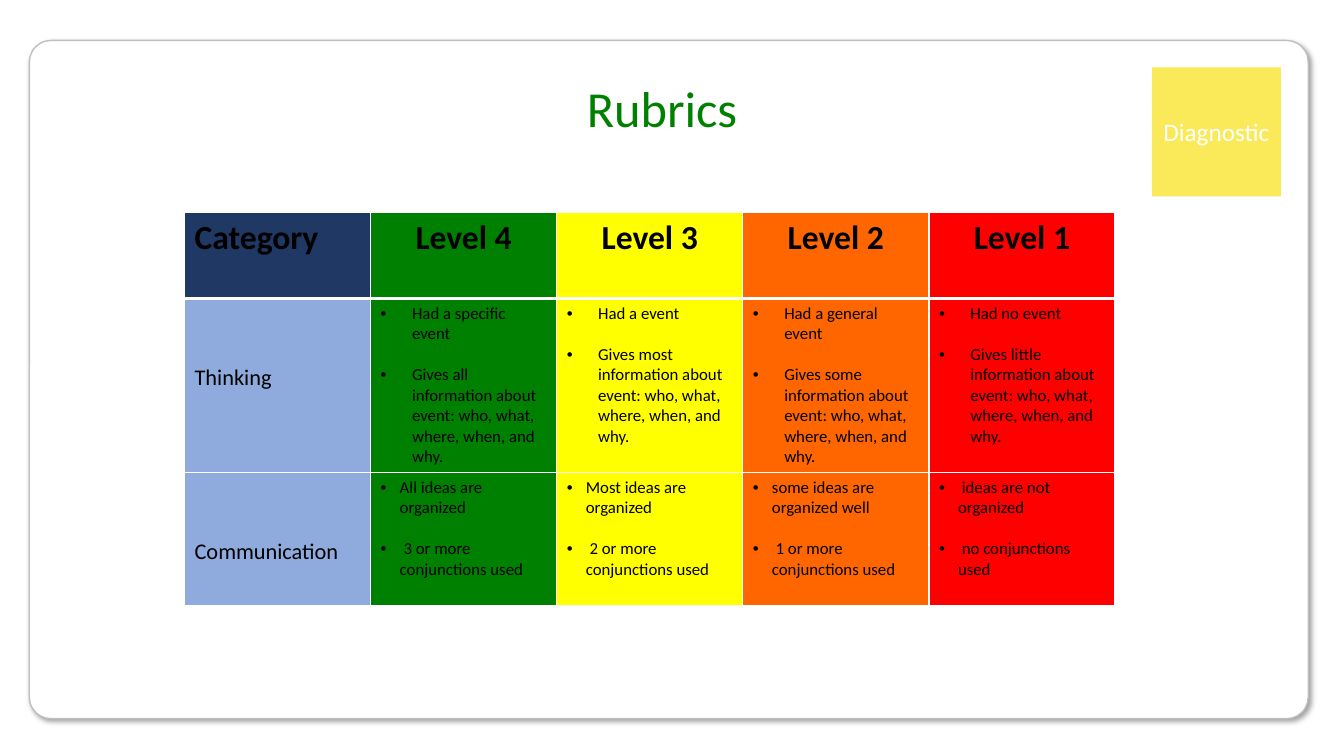
"""Build the writing rubric slide."""
from lxml.etree import SubElement
from pptx import Presentation
from pptx.dml.color import RGBColor
from pptx.enum.shapes import MSO_SHAPE as SHAPE
from pptx.enum.text import MSO_ANCHOR as ANCHOR, PP_ALIGN as ALIGN
from pptx.oxml import parse_xml
from pptx.oxml.ns import nsdecls, qn
from pptx.util import Cm, Pt

WHITE = RGBColor(0xFF, 0xFF, 0xFF)
BLACK = RGBColor(0, 0, 0)
GREY = RGBColor(0xBF, 0xBF, 0xBF)
PALE_YELLOW = RGBColor(0xFA, 0xE9, 0x59)
NAVY = RGBColor(0x20, 0x38, 0x64)
LIGHT_BLUE = RGBColor(0x8F, 0xAA, 0xDC)
GREEN = RGBColor(0, 0x80, 0)
YELLOW = RGBColor(0xFF, 0xFF, 0)
ORANGE = RGBColor(0xFF, 0x66, 0)
RED = RGBColor(0xFF, 0, 0)

LEVELS = [
    ("Level 4", GREEN, "Had a specific event", "all",
     "All ideas are organized", " 3 or more conjunctions used"),
    ("Level 3", YELLOW, "Had a event", "most",
     "Most ideas are organized", " 2 or more conjunctions used"),
    ("Level 2", ORANGE, "Had a general event", "some",
     "some ideas are organized well", " 1 or more conjunctions used"),
    ("Level 1", RED, "Had no event", "little",
     " ideas are not organized", " no conjunctions used"),
]
DETAIL = "Gives {} information about event: who, what, where, when, and why."
ROW_HEIGHTS = (2.16, 4.32, 3.35)
COLUMN_WIDTH = 4.69
INDENTS = (0, 0.79, 0.48)


class RubricSlide:
    """Hold the text style and the slide being filled."""

    def __init__(self, prs):
        self.font = {"name": "Calibri", "bold": False}
        self.s = prs.slides.add_slide(prs.slide_layouts[5])

    def add_text(self, p, text, color, **formats):
        r = p.add_run()
        r.text = text
        for key, value in {**self.font, **formats}.items():
            setattr(r.font, key, value)
        r.font.color.rgb = color

    def title(self, text, box):
        sp = self.s.shapes.title
        sp.left, sp.top, sp.width, sp.height = map(Cm, box)
        sp.element.getparent().append(sp.element)
        tf = sp.text_frame
        tf.vertical_anchor = ANCHOR.MIDDLE
        tf.paragraphs[0].alignment = ALIGN.CENTER
        self.add_text(tf.paragraphs[0], text, GREEN, size=Pt(36))

    def shape(self, kind, box, fill):
        sp = self.s.shapes.add_shape(kind, *map(Cm, box))
        sp.shadow.inherit = False
        sp.fill.solid()
        sp.fill.fore_color.rgb = fill
        sp.line.fill.background()
        return sp

    def panel(self, box):
        sp = self.shape(SHAPE.ROUNDED_RECTANGLE, box, WHITE)
        sp.adjustments[0] = 0.032
        sp.line.color.rgb = GREY
        sp.line.width = Pt(1)
        effects = sp.element.spPr.find(qn("a:effectLst"))
        effects.append(parse_xml(
            f'<a:outerShdw {nsdecls("a")} blurRad="{Pt(4)}" dist="{Pt(3)}" dir="2700000" '
            'algn="tl" rotWithShape="0"><a:srgbClr val="000000">'
            '<a:alpha val="40000"/></a:srgbClr></a:outerShdw>'))

    def badge(self, text, box):
        tf = self.shape(SHAPE.RECTANGLE, box, PALE_YELLOW).text_frame
        tf.word_wrap = False
        tf.vertical_anchor = ANCHOR.MIDDLE
        tf.paragraphs[0].alignment = ALIGN.CENTER
        self.add_text(tf.paragraphs[0], text, WHITE, size=Pt(18))

    def cell(self, cell, fill, top=1, bottom=1):
        tcPr = cell._tc.get_or_add_tcPr()
        for side, width in {"L": 1, "R": 1, "T": top, "B": bottom}.items():
            tcPr.append(parse_xml(
                f'<a:ln{side} {nsdecls("a")} w="{Pt(width)}"><a:solidFill>'
                f'<a:srgbClr val="{WHITE}"/></a:solidFill></a:ln{side}>'))
        cell.fill.solid()
        cell.fill.fore_color.rgb = fill
        return cell.text_frame.paragraphs[0]

    def bullets(self, cell, items, indent):
        for i, text in enumerate(items):
            p = cell.text_frame.add_paragraph() if i else cell.text_frame.paragraphs[0]
            pPr = p._p.get_or_add_pPr()
            pPr.set("marL", str(Cm(indent)))
            pPr.set("indent", str(-Cm(indent)))
            if i:
                p.space_before = Pt(14.6)
            SubElement(pPr, qn("a:buFont"), typeface="Arial")
            SubElement(pPr, qn("a:buChar"), char="•")
            self.add_text(p, text, BLACK, size=Pt(12))

    def rubric(self, left, top):
        rows, cols = len(ROW_HEIGHTS), len(LEVELS) + 1
        table = self.s.shapes.add_table(
            rows, cols, Cm(left), Cm(top), Cm(cols * COLUMN_WIDTH), Cm(sum(ROW_HEIGHTS))).table
        table.horz_banding = False
        for column in table.columns:
            column.width = Cm(COLUMN_WIDTH)
        for row, height in zip(table.rows, ROW_HEIGHTS):
            row.height = Cm(height)
        p = self.cell(table.cell(0, 0), NAVY, bottom=3)
        self.add_text(p, "Category", BLACK, size=Pt(24), bold=True)
        for i, name in enumerate(("Thinking", "Communication"), 1):
            cell = table.cell(i, 0)
            p = self.cell(cell, LIGHT_BLUE, top=3 if i == 1 else 1)
            cell.margin_top = Cm(1.65)
            self.add_text(p, name, BLACK, size=Pt(16))
        for c, (level, fill, event, amount, ideas, conjunctions) in enumerate(LEVELS, 1):
            p = self.cell(table.cell(0, c), fill, bottom=3)
            p.alignment = ALIGN.CENTER
            self.add_text(p, level, BLACK, size=Pt(24), bold=True)
            criteria = ((event, DETAIL.format(amount)), (ideas, conjunctions))
            for i, items in enumerate(criteria, 1):
                self.cell(table.cell(i, c), fill, top=3 if i == 1 else 1)
                self.bullets(table.cell(i, c), items, INDENTS[i])


def main():
    prs = Presentation()
    prs.slide_width, prs.slide_height = Cm(33.87), Cm(19.05)
    slide = RubricSlide(prs)
    slide.panel((0.74, 1.02, 32.23, 17.09))
    slide.badge("Diagnostic", (29.03, 1.7, 3.25, 3.25))
    slide.rubric(4.65, 5.36)
    slide.title("Rubrics", (5.84, 1.8, 21.69, 1.8))
    prs.save("out.pptx")


if __name__ == "__main__":
    main()
